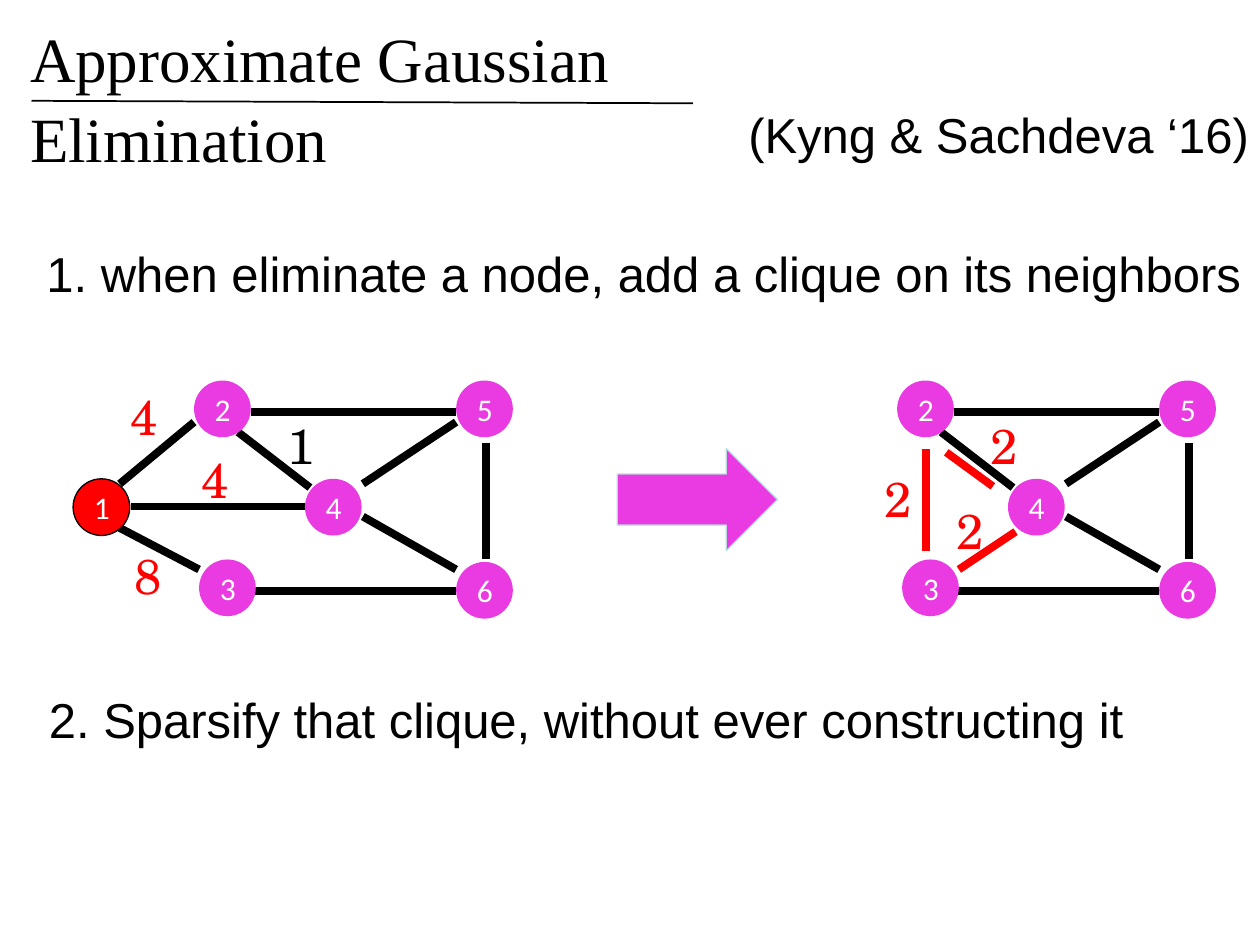
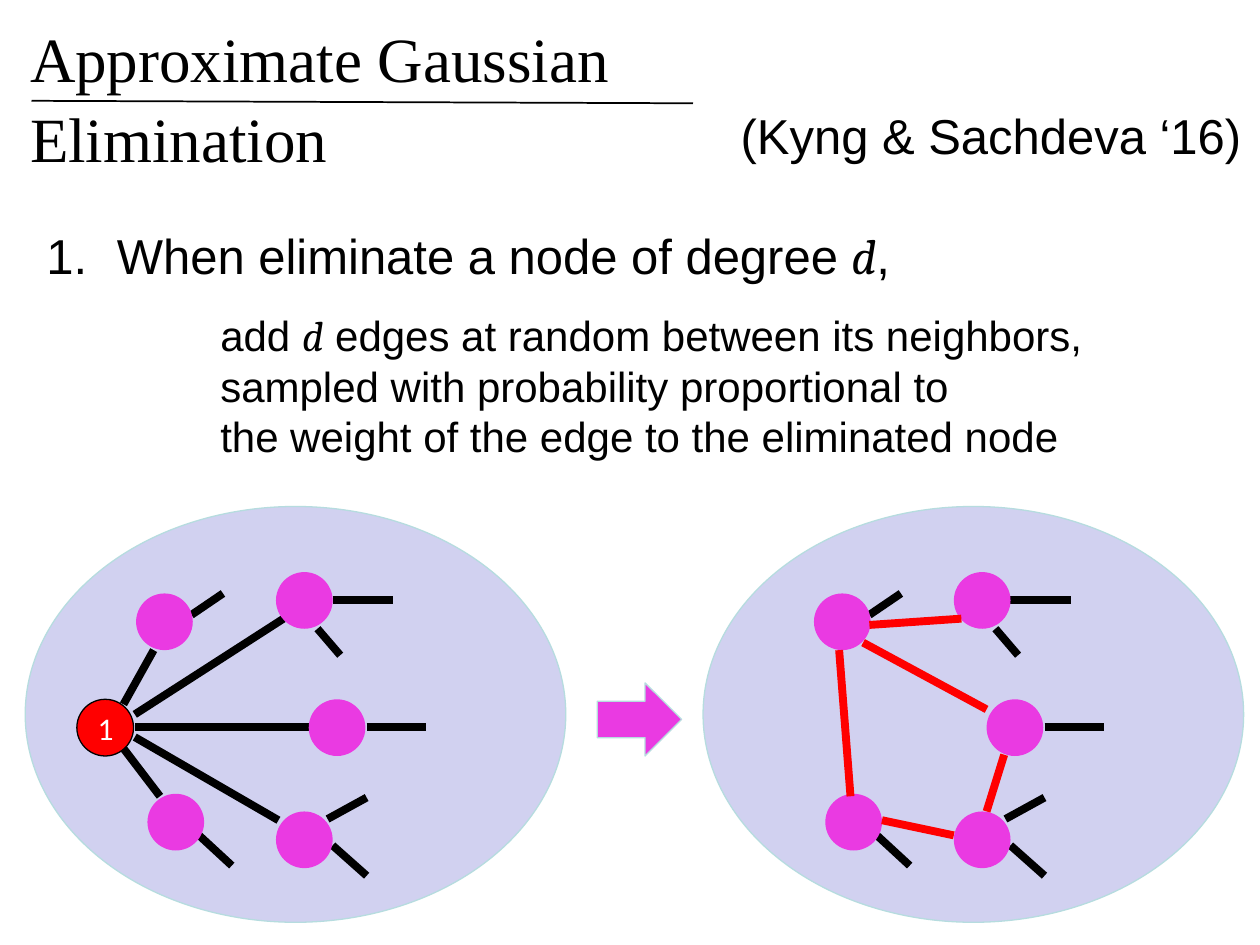
from dataclasses import dataclass
from lxml.etree import SubElement
from pptx import Presentation
from pptx.dml.color import RGBColor
from pptx.enum.shapes import MSO_CONNECTOR, MSO_SHAPE
from pptx.enum.text import MSO_ANCHOR, PP_ALIGN
from pptx.oxml.ns import qn
from pptx.util import Inches, Pt


@dataclass(frozen=True)
class Theme:
    ink: str = "000000"
    paper: str = "FFFFFF"
    pink: str = "EA3AE2"
    red: str = "FF0000"
    cloud: str = "D1D1F0"
    rim: str = "B6DCDF"
    serif: str = "Times New Roman"
    sans: str = "Arial"
    digit: str = "Calibri"
    weight: str = "TeX Gyre Schola"
    math: str = "Cambria"
    head: int = 36
    body: int = 28
    sub: int = 24
    small: int = 18
    edge: float = 4.5
    thin: float = 0.75


THEME = Theme()
COLS, ROWS = 100, 75
NODE = 4.5

TITLE = "Approximate Gaussian Elimination"
CITE = "(Kyng & Sachdeva ‘16)"

CLIQUE = {
    "cite": (58.4, 7.8),
    "steps": [
        ("1. when eliminate a node, add a clique on its neighbors", (2.7, 18.8, 98.9, 5.7)),
        ("2. Sparsify that clique, without ever constructing it", (2.9, 54.2, 88.3, 5.7)),
    ],
    "shift": 55.8,
    "arrow": (49, 35.6, 12.7, 8.1),
    "gone": ("1", 5.8, 38),
    "nodes": [("2", 15.4, 30.2), ("4", 24.2, 38), ("3", 15.8, 44.4),
              ("6", 36.2, 44.6), ("5", 36.2, 30.2)],
    "lost": [(9.5, 38.4, 15.4, 33.5), (10.4, 40.2, 24.2, 40.2), (9.5, 41.9, 15.8, 45.2)],
    "kept": [(19.5, 46.9, 36.2, 46.9), (19.9, 32.7, 36.2, 32.7), (38.6, 44.4, 38.6, 35.2),
             (28.8, 41, 36.2, 45.2), (28.8, 38.4, 36.2, 33.5), (18.9, 34.3, 24.6, 38.7)],
    "new": [(73.5, 43.7, 73.5, 35.6), (80.6, 42.2, 76.1, 45.2), (75.1, 35.9, 78.8, 38.6)],
    "labels": [("4", 9.4, 30.2, "red"), ("8", 9.7, 42.8, "red"), ("4", 15, 35.2, "red"),
               ("1", 21.8, 32.5, "ink"), ("2", 74.9, 39.2, "red"), ("2", 69.2, 36.7, "red"),
               ("2", 77.6, 32.5, "red")],
}

SAMPLE = {
    "cite": (57.8, 7.9),
    "rule": "When eliminate a node of degree *d*,",
    "detail": ["add *d* edges at random between its neighbors,",
               "sampled with probability proportional to",
               "the weight of the edge to the eliminated node"],
    "shift": 53.8,
    "arrow": (47.4, 54.2, 6.7, 5.8),
    "cloud": (2, 40.2, 42.9, 33),
    "gone": ("1", 6.1, 55.5),
    "nodes": [("", 10.8, 47.1), ("", 24.5, 55.5), ("", 11.7, 63), ("", 21.9, 64.4),
              ("", 21.9, 45.4)],
    "lost": [(9.8, 55.9, 12.2, 51.6), (10.7, 57.7, 24.5, 57.7), (10.7, 58.5, 22.1, 65.1),
             (10.7, 56.7, 22.5, 49.1), (9.8, 59.4, 12.7, 63.2)],
    "kept": [(29.1, 57.7, 33.8, 57.7), (26.4, 47.6, 31.2, 47.6), (25.2, 49.9, 27, 52),
             (15.2, 48.8, 17.7, 47.1), (15.8, 66.3, 18.4, 68.7), (26.4, 67.1, 29.1, 69.5),
             (26, 65, 29.1, 63.3)],
    "new": [(78.3, 56.3, 68.5, 51), (70, 65.1, 75.7, 66.3), (69, 49.6, 76.3, 49.1),
            (66.6, 51.6, 67.5, 63.2), (79.7, 59.9, 78.3, 64.4)],
}


def grid(*cells):
    return [Inches(cell / 10) for cell in cells]


def tint(name):
    return RGBColor.from_string(getattr(THEME, name))


def write(frame, text, *, font="sans", size="body", color="ink", align=None,
          lead=None, hang=0):
    frame.word_wrap = True
    lines = [text] if isinstance(text, str) else text
    for row, line in enumerate(lines):
        para = frame.paragraphs[0] if row == 0 else frame.add_paragraph()
        if hang:
            props = para._p.get_or_add_pPr()
            props.set("marL", str(Inches(hang)))
            props.set("indent", str(-Inches(hang)))
            SubElement(props, qn("a:buFont")).set("typeface", THEME.sans)
            SubElement(props, qn("a:buAutoNum")).set("type", "arabicPeriod")
        para.alignment = align
        if lead:
            para.line_spacing = lead
        for part, words in enumerate(line.split("*")):
            run = para.add_run()
            run.text = words
            run.font.name = getattr(THEME, "math" if part % 2 else font)
            run.font.italic = part % 2 == 1
            run.font.size = Pt(getattr(THEME, size))
            run.font.color.rgb = tint(color)


def label(slide, text, area, **style):
    write(slide.shapes.add_textbox(*grid(*area)).text_frame, text, **style)


def stroke(slide, ends, color="ink", width=THEME.edge):
    line = slide.shapes.add_connector(MSO_CONNECTOR.STRAIGHT, *grid(*ends))
    line.line.color.rgb = tint(color)
    line.line.width = Pt(width)
    SubElement(line._element.spPr, qn("a:effectLst"))


def solid(slide, kind, area, fill, rim=None):
    shape = slide.shapes.add_shape(kind, *grid(*area))
    shape.shadow.inherit = False
    shape.fill.solid()
    shape.fill.fore_color.rgb = tint(fill)
    if rim:
        shape.line.color.rgb = tint(rim)
        shape.line.width = Pt(THEME.thin)
    else:
        shape.line.fill.background()
    return shape


def node(slide, name, left, top, fill="pink", rim=None):
    dot = solid(slide, MSO_SHAPE.OVAL, (left, top, NODE, NODE), fill, rim)
    if name:
        dot.text_frame.vertical_anchor = MSO_ANCHOR.MIDDLE
        write(dot.text_frame, name, font="digit", size="small", color="paper",
              align=PP_ALIGN.CENTER)


def graph(slide, data):
    for shift in (0, data["shift"]):
        if "cloud" in data:
            left, *rest = data["cloud"]
            solid(slide, MSO_SHAPE.OVAL, (left + shift, *rest), "cloud", "rim")
        for x, y, right, low in data["kept"]:
            stroke(slide, (x + shift, y, right + shift, low))
        if not shift:
            for ends in data["lost"]:
                stroke(slide, ends)
            node(slide, *data["gone"], fill="red", rim="ink")
        for name, left, top in data["nodes"]:
            node(slide, name, left + shift, top)
    for ends in data["new"]:
        stroke(slide, ends, "red")
    solid(slide, MSO_SHAPE.RIGHT_ARROW, data["arrow"], "pink", "rim")


def start(deck, data):
    slide = deck.slides.add_slide(deck.slide_layouts[6])
    label(slide, TITLE, (1.4, 0.8, 56, 13), font="serif", size="head", lead=1.05)
    stroke(slide, (2.5, 8, 55, 8.2), width=1)
    label(slide, CITE, (*data["cite"], 42.2, 5.7))
    graph(slide, data)
    return slide


def main():
    deck = Presentation()
    deck.slide_width, deck.slide_height = grid(COLS, ROWS)

    slide = start(deck, CLIQUE)
    for text, area in CLIQUE["steps"]:
        label(slide, text, area)
    for text, left, top, color in CLIQUE["labels"]:
        label(slide, text, (left, top, 4, 5.7), font="weight", color=color)

    slide = start(deck, SAMPLE)
    label(slide, SAMPLE["rule"], (2.7, 17.4, 72.7, 5.7), hang=0.56)
    label(slide, SAMPLE["detail"], (16.5, 24.1, 73.7, 13.1), size="sub")

    deck.save("out.pptx")


if __name__ == "__main__":
    main()
